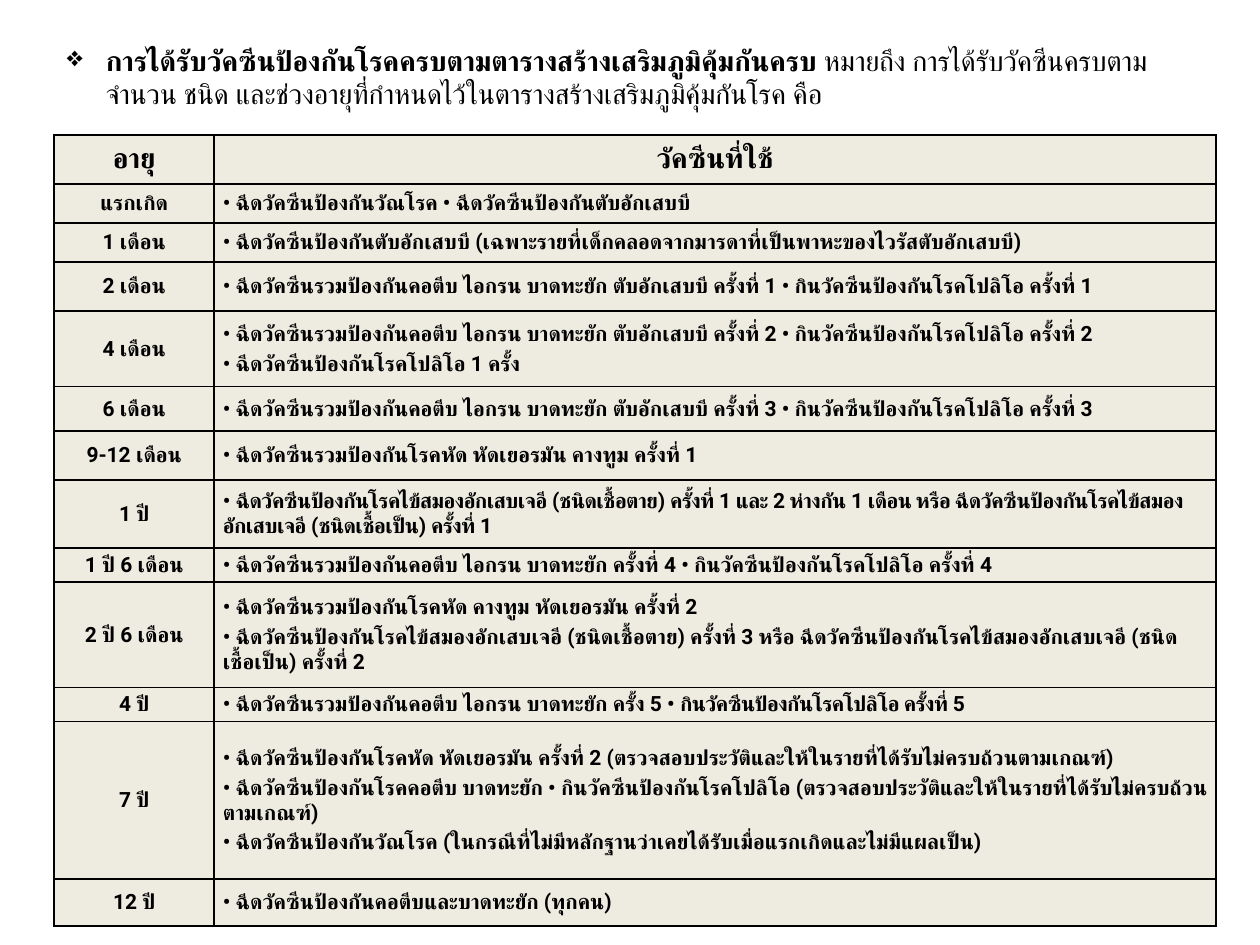
"""Build a slide with the childhood immunisation schedule."""
from dataclasses import dataclass

from lxml.etree import SubElement
from pptx import Presentation
from pptx.dml.color import RGBColor
from pptx.enum.text import MSO_ANCHOR as Anchor, MSO_AUTO_SIZE as AutoSize, PP_ALIGN as Align
from pptx.oxml.ns import qn
from pptx.util import Inches, Pt


@dataclass(frozen=True)
class Theme:
    """Colours, font and type sizes of the slide."""
    font: str = "Roboto"
    ink: str = "000000"
    cell: str = "EEECE1"
    heading: int = 16
    body: int = 12
    tight: float = -0.3


THEME = Theme()
TITLE = "การได้รับวัคซีนป้องกันโรคครบตามตารางสร้างเสริมภูมิคุ้มกันครบ "
MEANING = "หมายถึง การได้รับวัคซีนครบตามจำนวน ชนิด และช่วงอายุที่กำหนดไว้ในตารางสร้างเสริมภูมิคุ้มกันโรค คือ"
COMBINED = "• ฉีดวัคซีนรวมป้องกันคอตีบ ไอกรน บาดทะยัก "
POLIO = "กินวัคซีนป้องกันโรคโปลิโอ"
JE_KILLED = "ฉีดวัคซีนป้องกันโรคไข้สมองอักเสบเจอี (ชนิดเชื้อตาย) ครั้งที่"
JE_LIVE = "ฉีดวัคซีนป้องกันโรคไข้สมองอักเสบเจอี (ชนิดเชื้อเป็น) ครั้งที่"
CHECK = "(ตรวจสอบประวัติและให้ในรายที่ได้รับไม่ครบถ้วนตามเกณฑ์)"


def infant_dose(n):
    """Return the combined and polio vaccine line for infant dose n."""
    return f"{COMBINED}ตับอักเสบบี ครั้งที่ {n} • {POLIO} ครั้งที่ {n}"


SCHEDULE = [
    ("แรกเกิด", 0.31, ["• ฉีดวัคซีนป้องกันวัณโรค • ฉีดวัคซีนป้องกันตับอักเสบบี"]),
    ("1 เดือน", 0.31, ["• ฉีดวัคซีนป้องกันตับอักเสบบี (เฉพาะรายที่เด็กคลอดจากมารดาที่เป็นพาหะของไวรัสตับอักเสบบี)"]),
    ("2 เดือน", 0.39, [infant_dose(1)]),
    ("4 เดือน", 0.6, [infant_dose(2), "• ฉีดวัคซีนป้องกันโรคโปลิโอ 1 ครั้ง"]),
    ("6 เดือน", 0.35, [infant_dose(3)]),
    ("9-12 เดือน", 0.39, ["• ฉีดวัคซีนรวมป้องกันโรคหัด หัดเยอรมัน คางทูม ครั้งที่ 1"]),
    ("1 ปี", 0.54, [("• ", f"{JE_KILLED} 1 และ 2 ห่างกัน 1 เดือน หรือ {JE_LIVE} 1")]),
    ("1 ปี 6 เดือน", 0.27, [f"{COMBINED}ครั้งที่ 4 • {POLIO} ครั้งที่ 4"]),
    ("2 ปี 6 เดือน", 0.84, [
        "• ฉีดวัคซีนรวมป้องกันโรคหัด คางทูม หัดเยอรมัน ครั้งที่ 2",
        f"• {JE_KILLED} 3 หรือ {JE_LIVE} 2"]),
    ("4 ปี", 0.27, [(f"{COMBINED}ครั้ง 5 • ", f"{POLIO} ครั้งที่ 5")]),
    ("7 ปี", 1.25, [
        f"• ฉีดวัคซีนป้องกันโรคหัด หัดเยอรมัน ครั้งที่ 2 {CHECK}",
        f"• ฉีดวัคซีนป้องกันโรคคอตีบ บาดทะยัก • {POLIO} {CHECK}",
        "• ฉีดวัคซีนป้องกันวัณโรค (ในกรณีที่ไม่มีหลักฐานว่าเคยได้รับเมื่อแรกเกิดและไม่มีแผลเป็น)"]),
    ("12 ปี", 0.37, ["• ฉีดวัคซีนป้องกันคอตีบและบาดทะยัก (ทุกคน)"]),
]


def add_run(p, text, size=THEME.body, bold=True, spacing=0):
    """Add a run in the theme font, for Latin and Thai script alike."""
    r = p.add_run()
    r.text = text
    r.font.size, r.font.bold, r.font.name = Pt(size), bold, THEME.font
    r.font.color.rgb = RGBColor.from_string(THEME.ink)
    rpr = r.font._element
    SubElement(rpr, qn("a:cs"), typeface=THEME.font)
    if spacing:
        rpr.set("spc", str(round(spacing * 100)))


def add_title(s):
    """Place the bulleted definition in the title placeholder."""
    sp = s.shapes.title
    sp.left, sp.top, sp.width, sp.height = map(Inches, (0.43, 0.29, 9.29, 0.64))
    tf = sp.text_frame
    tf.word_wrap, tf.auto_size = True, AutoSize.SHAPE_TO_FIT_TEXT
    tf.vertical_anchor = Anchor.MIDDLE
    p = tf.paragraphs[0]
    p.alignment = Align.LEFT
    ppr = p._p.get_or_add_pPr()
    ppr.set("marL", str(Inches(0.31)))
    ppr.set("indent", str(-Inches(0.31)))
    SubElement(ppr, qn("a:buChar"), char="❖")
    add_run(p, TITLE, size=THEME.heading)
    add_run(p, MEANING, size=THEME.heading, bold=False)


def add_borders(cell):
    """Draw a thin line on all four sides of a cell."""
    tcpr = cell._tc.get_or_add_tcPr()
    for side in ("lnL", "lnR", "lnT", "lnB"):
        ln = SubElement(tcpr, qn(f"a:{side}"), w=str(Pt(1)))
        fill = SubElement(ln, qn("a:solidFill"))
        SubElement(fill, qn("a:srgbClr"), val=THEME.ink)


def fill_cell(cell, paragraphs, size=THEME.body, align=Align.LEFT):
    """Format a cell; a tuple is a normal part and a tightly spaced part."""
    add_borders(cell)
    cell.fill.solid()
    cell.fill.fore_color.rgb = RGBColor.from_string(THEME.cell)
    cell.margin_left = cell.margin_right = Inches(0.07)
    cell.margin_top = cell.margin_bottom = 0
    cell.vertical_anchor = Anchor.MIDDLE
    tf = cell.text_frame
    for i, content in enumerate(paragraphs):
        p = tf.add_paragraph() if i else tf.paragraphs[0]
        p.alignment = align
        if i:
            p.space_before = Pt(3)
        parts = (content,) if isinstance(content, str) else content
        for text, spacing in zip(parts, (0, THEME.tight)):
            add_run(p, text, size=size, spacing=spacing)


def add_schedule(s):
    """Add the table of ages and vaccines."""
    heights = [0.39] + [height for _, height, _ in SCHEDULE]
    frame = s.shapes.add_table(len(heights), 2, Inches(0.43), Inches(1.07),
                               Inches(9.22), Inches(sum(heights)))
    table = frame.table
    table.first_row = table.horz_banding = False
    for column, width in zip(table.columns, (1.27, 7.95)):
        column.width = Inches(width)
    for row, height in zip(table.rows, heights):
        row.height = Inches(height)
    for col, label in enumerate(("อายุ", "วัคซีนที่ใช้")):
        fill_cell(table.cell(0, col), [label], size=THEME.heading, align=Align.CENTER)
    for row, (age, _, vaccines) in enumerate(SCHEDULE, 1):
        fill_cell(table.cell(row, 0), [age], align=Align.CENTER)
        fill_cell(table.cell(row, 1), vaccines)


def main():
    """Build and save the slide."""
    prs = Presentation()
    prs.slide_width, prs.slide_height = Inches(10), Inches(7.5)
    s = prs.slides.add_slide(prs.slide_layouts[5])
    add_title(s)
    add_schedule(s)
    prs.save("out.pptx")


if __name__ == "__main__":
    main()
